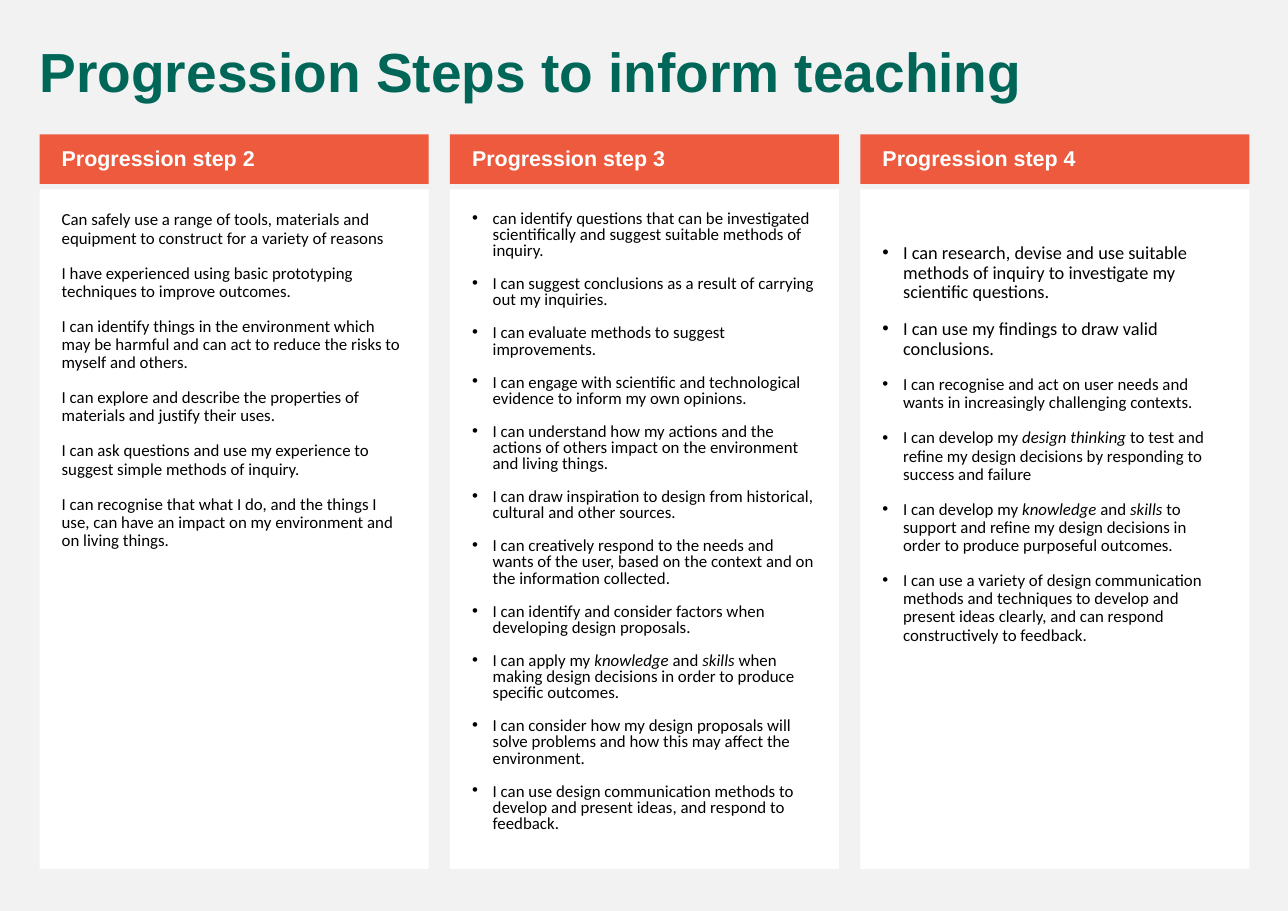
from lxml import etree
from pptx import Presentation
from pptx.dml import color
from pptx.enum import shapes, text
from pptx.oxml import ns
from pptx.util import Pt

# Layout in points
LEFT, PITCH, WIDTH = 25.9, 268.2, 254.2
HEAD_TOP, HEAD_HIGH = 87.8, 32.4
BODY_TOP, BODY_HIGH = 123.8, 444.2
PAD = 14.4

# Each column: heading, line spacing, bullets, top inset, (size, text) items.
# Words between asterisks are italic.
COLS = [
    ("Progression step 2", 0.9, False, PAD, [
        (11, "Can safely use a range of tools, materials and equipment to construct for a variety of reasons"),
        (11, "I have experienced using basic prototyping techniques to improve outcomes."),
        (11, "I can identify things in the environment which may be harmful and can act to reduce the risks to myself and others."),
        (11, "I can explore and describe the properties of materials and justify their uses."),
        (11, "I can ask questions and use my experience to suggest simple methods of inquiry."),
        (11, "I can recognise that what I do, and the things I use, can have an impact on my environment and on living things."),
    ]),
    ("Progression step 3", 0.8, True, PAD, [
        (11, "can identify questions that can be investigated scientifically and suggest suitable methods of inquiry."),
        (11, "I can suggest conclusions as a result of carrying out my inquiries."),
        (11, "I can evaluate methods to suggest improvements."),
        (11, "I can engage with scientific and technological evidence to inform my own opinions."),
        (11, "I can understand how my actions and the actions of others impact on the environment and living things."),
        (11, "I can draw inspiration to design from historical, cultural and other sources."),
        (11, "I can creatively respond to the needs and wants of the user, based on the context and on the information collected."),
        (11, "I can identify and consider factors when developing design proposals."),
        (11, "I can apply my *knowledge* and *skills* when making design decisions in order to produce specific outcomes."),
        (11, "I can consider how my design proposals will solve problems and how this may affect the environment."),
        (11, "I can use design communication methods to develop and present ideas, and respond to feedback."),
    ]),
    ("Progression step 4", 0.9, True, 35.3, [
        (12, "I can research, devise and use suitable methods of inquiry to investigate my scientific questions."),
        (12, "I can use my findings to draw valid conclusions."),
        (11, "I can recognise and act on user needs and wants in increasingly challenging contexts."),
        (11, "I can develop my *design thinking* to test and refine my design decisions by responding to success and failure"),
        (11, "I can develop my *knowledge* and *skills* to support and refine my design decisions in order to produce purposeful outcomes."),
        (11, "I can use a variety of design communication methods and techniques to develop and present ideas clearly, and can respond constructively to feedback."),
    ]),
]


def paint(fill, code):
    fill.solid()
    fill.fore_color.rgb = color.RGBColor.from_string(code)


def set_frame(shape, anchor, insets):
    frame = shape.text_frame
    frame.word_wrap = True
    frame.auto_size = text.MSO_AUTO_SIZE.NONE
    frame.vertical_anchor = anchor
    (frame.margin_left, frame.margin_top,
     frame.margin_right, frame.margin_bottom) = map(Pt, insets)
    return frame


def add_box(slide, left, top, width, height, fill):
    box = slide.shapes.add_shape(shapes.MSO_SHAPE.RECTANGLE,
                                 Pt(left), Pt(top), Pt(width), Pt(height))
    box.shadow.inherit = False
    box.line.fill.background()
    paint(box.fill, fill)
    return box


def add_bullet(para):
    props = para._p.get_or_add_pPr()
    props.set("marL", str(Pt(13.5)))
    props.set("indent", str(Pt(-13.5)))
    etree.SubElement(props, ns.qn("a:buFont"), typeface="Arial")
    etree.SubElement(props, ns.qn("a:buChar"), char="•")


def write(para, words, size, face, code, bold=False, gap=0.9):
    para.alignment = text.PP_ALIGN.LEFT
    para.line_spacing = gap
    para.space_before = Pt(11)
    for i, part in enumerate(words.split("*")):
        run = para.add_run()
        run.text = part
        font = run.font
        font.size, font.name, font.bold = Pt(size), face, bold
        font.italic = i % 2 == 1
        paint(font.fill, code)


def add_head(slide, left, words):
    box = add_box(slide, left, HEAD_TOP, WIDTH, HEAD_HIGH, "ED5A3E")
    frame = set_frame(box, text.MSO_ANCHOR.MIDDLE, (PAD, 3.6, 7.2, 3.6))
    write(frame.paragraphs[0], words, 14, "Arial", "FFFFFF", bold=True)


def add_body(slide, left, gap, dots, inset, items):
    box = add_box(slide, left, BODY_TOP, WIDTH, BODY_HIGH, "FFFFFF")
    frame = set_frame(box, text.MSO_ANCHOR.TOP, (PAD, inset, PAD, PAD))
    for i, (size, words) in enumerate(items):
        para = frame.add_paragraph() if i else frame.paragraphs[0]
        write(para, words, size, "Calibri", "000000", gap=gap)
        if dots:
            add_bullet(para)


def set_title(slide, words):
    title = slide.shapes.title
    title.left, title.top = Pt(18.7), Pt(25.9)
    title.width, title.height = Pt(797.8), Pt(46.8)
    frame = set_frame(title, text.MSO_ANCHOR.TOP, (7.2, 3.6, 7.2, 3.6))
    write(frame.paragraphs[0], words, 36, "Arial", "006758", bold=True)


def main():
    deck = Presentation()
    deck.slide_width, deck.slide_height = Pt(841.7), Pt(595.4)
    slide = deck.slides.add_slide(deck.slide_layouts[5])
    paint(slide.background.fill, "F2F2F2")
    set_title(slide, "Progression Steps to inform teaching")

    # One heading and one panel per step
    for i, (head, gap, dots, inset, items) in enumerate(COLS):
        left = LEFT + i * PITCH
        add_body(slide, left, gap, dots, inset, items)
        add_head(slide, left, head)

    deck.save("out.pptx")


if __name__ == "__main__":
    main()
